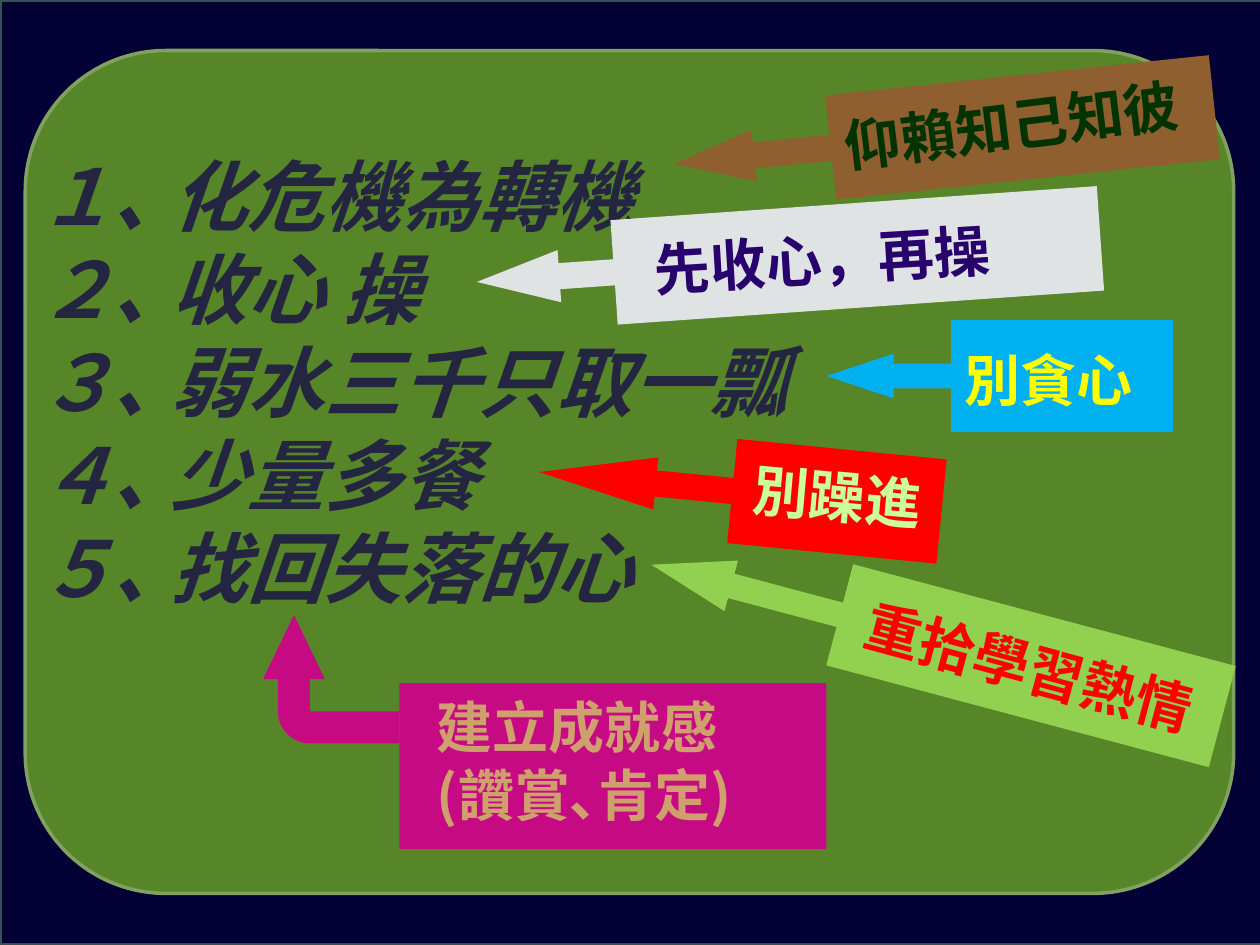
from lxml.etree import SubElement
from pptx import Presentation
from pptx.dml.color import RGBColor
from pptx.enum.shapes import MSO_SHAPE
from pptx.enum.text import MSO_ANCHOR
from pptx.oxml.ns import qn
from pptx.util import Cm, Pt

SC = "Noto Sans CJK SC"
TC = "Noto Sans CJK TC"


def rgb(value):
    return RGBColor.from_string(value)


def write(p, text, size=32, font=SC, color="000000", italic=False):
    p.line_spacing = Pt(round(size * 1.21, 1))
    for i, line in enumerate(text.splitlines()):
        if i:
            p.add_line_break()
        r = p.add_run()
        r.text = line
        r.font.size = Pt(size)
        r.font.bold = True
        r.font.italic = italic
        r.font.name = font
        r.font.color.rgb = rgb(color)
        SubElement(r.font._element, qn("a:ea"), typeface=font)


class Deck:
    def __init__(self, background):
        self.prs = Presentation()
        self.prs.slide_width = Cm(25.4)
        self.prs.slide_height = Cm(19.05)
        self.s = self.prs.slides.add_slide(self.prs.slide_layouts[6])
        self.s.background.fill.solid()
        self.s.background.fill.fore_color.rgb = rgb(background)

    def shape(self, kind, box, fill, line=None, adj=(), rot=0):
        sp = self.s.shapes.add_shape(kind, *map(Cm, box))
        sp.shadow.inherit = False
        sp.fill.solid()
        sp.fill.fore_color.rgb = rgb(fill)
        if line:
            sp.line.color.rgb = rgb(line)
            sp.line.width = Pt(2)
        else:
            sp.line.fill.background()
        for i, value in enumerate(adj):
            sp.adjustments[i] = value
        sp.rotation = rot

    def text(self, box, paragraphs, rot=0, size=32, **style):
        sp = self.s.shapes.add_textbox(*map(Cm, box))
        sp.rotation = rot
        tf = sp.text_frame
        tf.word_wrap = True
        tf.vertical_anchor = MSO_ANCHOR.TOP
        tf.margin_top = Pt(round(3.6 + size * 0.08, 1))
        for i, text in enumerate(paragraphs):
            p = tf.add_paragraph() if i else tf.paragraphs[0]
            write(p, text, size=size, **style)

    def callout(self, box, rot, adj, fill, label, label_at, label_rot, color):
        self.shape(MSO_SHAPE.LEFT_ARROW_CALLOUT, box, fill, adj=adj, rot=rot)
        self.text((*label_at, 1.63), [label], rot=label_rot, color=color)


CALLOUTS = [
    ((13.56, 1.68, 10.95, 2.11), 354, (0.25, 0.25, 0.77, 0.71), "8F5F2F",
     "仰賴知己知彼", (16.74, 1.57, 7.77), 353, "003300"),
    ((9.6, 4.19, 12.6, 2.11), 356, (0.25, 0.25, 0.79, 0.78), "E0E3E4",
     "先收心，再操", (12.93, 4.27, 8.26), 356.4, "28016D"),
    ((16.66, 6.45, 6.99, 2.26), 0, (0.22, 0.2, 0.6, 0.64), "00B0F0",
     "別貪心", (19.2, 6.73, 3.99), 0, "FFFF00"),
    ((10.85, 8.86, 8.15, 2.11), 5.6, (0.25, 0.25, 1.12, 0.52), "FF0000",
     "別躁進", (14.94, 9.09, 3.99), 5.1, "CCFF99"),
    ((12.93, 11.86, 11.91, 2.11), 14.9, (0.24, 0.25, 0.79, 0.67), "92D050",
     "重拾學習熱情", (17.12, 12.62, 7.92), 15.1, "FF0000"),
]

STEPS = [
    """１､ 化危機為轉機
２､ 收心 操
３､ 弱水三千只取一瓢
４､ 少量多餐""",
    "５､ 找回失落的心",
]


def main():
    deck = Deck("2A2B4C")
    deck.shape(MSO_SHAPE.RECTANGLE, (0, 0, 25.58, 19.05), "030036", "3A5154")
    deck.shape(MSO_SHAPE.ROUNDED_RECTANGLE, (0.51, 1.02, 24.36, 16.99), "578628", "81A160")
    deck.text((0.51, 2.72, 24.36, 9.65), STEPS, size=44, font=TC, color="242541", italic=True)
    for callout in CALLOUTS:
        deck.callout(*callout)
    deck.shape(MSO_SHAPE.BENT_ARROW, (5.38, 12.32, 2.59, 2.74), "C60A83",
               adj=(0.25, 0.24, 0.5, 0.25), rot=270)
    deck.shape(MSO_SHAPE.RECTANGLE, (8.05, 13.77, 8.61, 3.35), "C60A83")
    deck.text((8.56, 13.74, 8.28, 3), ["建立成就感", "(讚賞､肯定)"], color="D09F6E")
    deck.prs.save("out.pptx")


if __name__ == "__main__":
    main()
